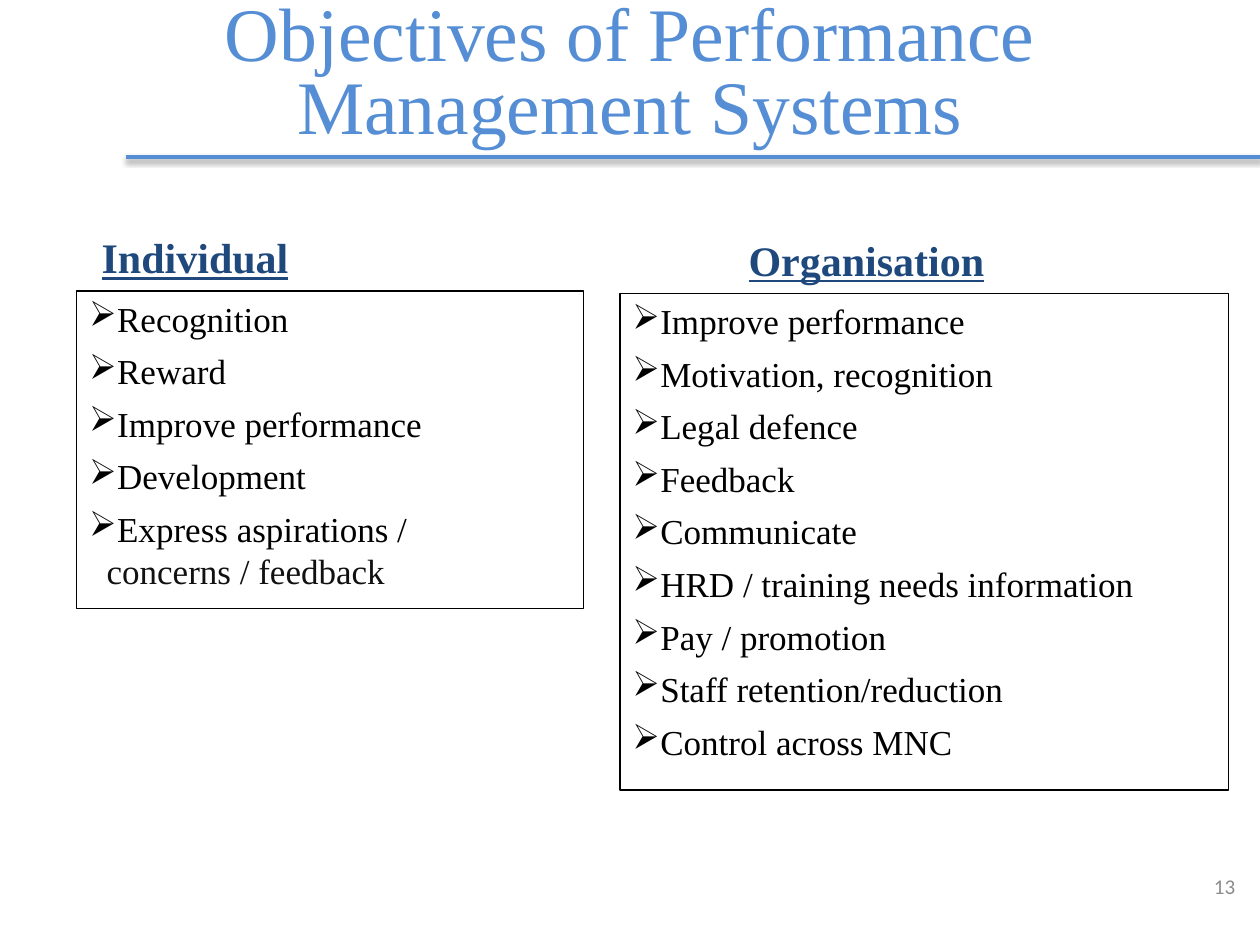
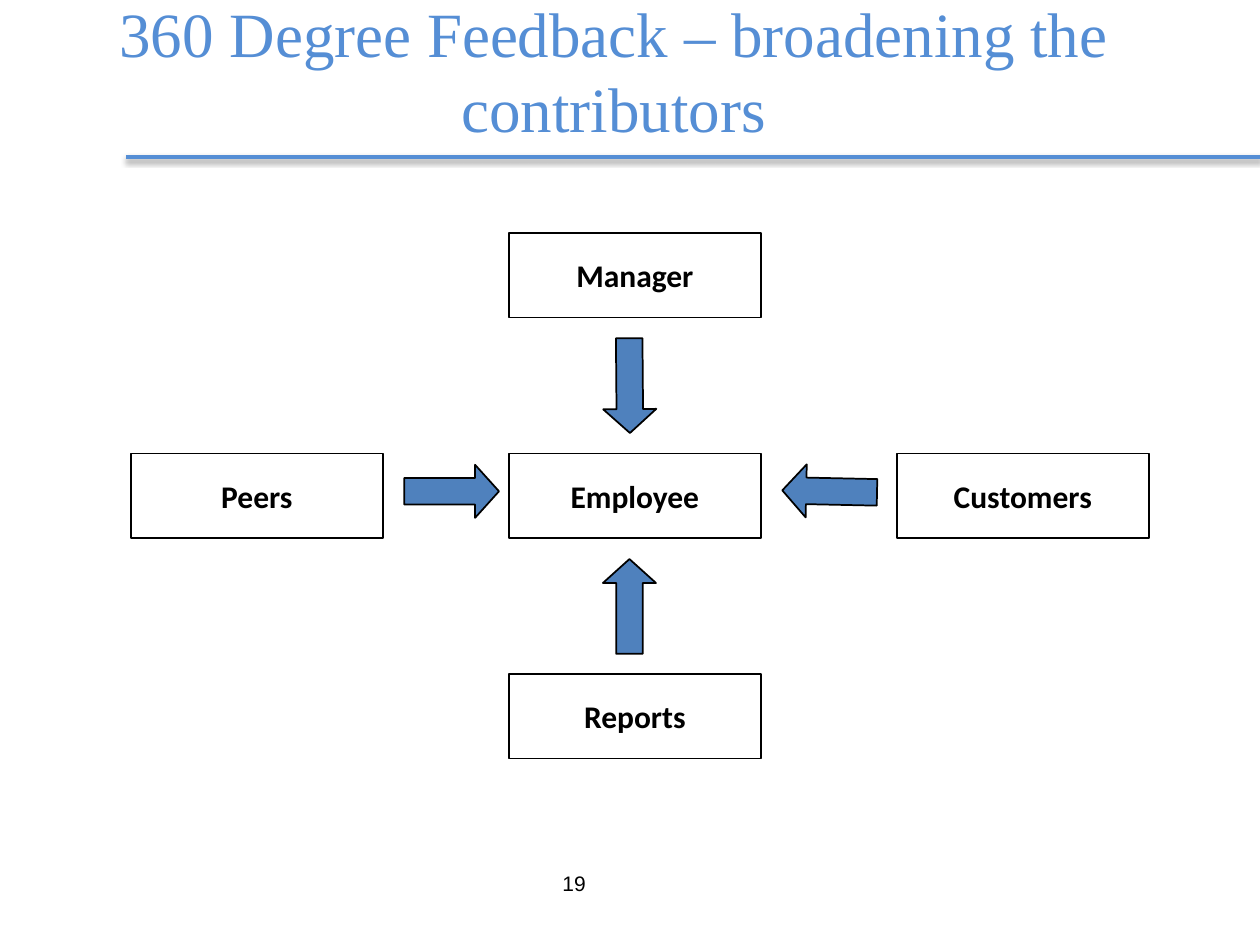
from dataclasses import dataclass

from lxml.etree import SubElement
from pptx import Presentation
from pptx.dml.color import RGBColor
from pptx.enum.shapes import MSO_CONNECTOR, MSO_SHAPE
from pptx.enum.text import MSO_ANCHOR, PP_ALIGN
from pptx.oxml import parse_xml
from pptx.oxml.ns import nsdecls, qn
from pptx.util import Cm, Pt


@dataclass(frozen=True)
class Theme:
    """Colours, fonts and type sizes shared by the slides."""
    sky: str = "558ED5"
    navy: str = "1F497D"
    steel: str = "4F81BD"
    grey: str = "8C8C8C"
    black: str = "000000"
    soft_black: str = "111111"
    serif: str = "Times New Roman"
    sans: str = "Calibri"
    plain: str = "Arial"
    heading_size: float = 24
    item_size: float = 20
    node_size: float = 18
    number_size: float = 12


THEME = Theme()

INDIVIDUAL = ["Recognition", "Reward", "Improve performance", "Development",
              "Express aspirations /\vconcerns / feedback"]
ORGANISATION = ["Improve performance", "Motivation, recognition", "Legal defence",
                "Feedback", "Communicate", "HRD / training needs information",
                "Pay / promotion", "Staff retention/reduction", "Control across MNC"]


def apply(target, formats):
    """Set every attribute of target named in a dict of format values."""
    for name, value in formats.items():
        setattr(target, name, value)


def add_span(para, text, family, size, color, **extra):
    """Add one formatted run to a paragraph."""
    span = para.add_run()
    span.text = text
    apply(span.font, {"name": family, "size": Pt(size), **extra})
    span.font.color.rgb = RGBColor.from_string(color)


def add_label(page, box, text, family, size, color, align=PP_ALIGN.LEFT,
              anchor=MSO_ANCHOR.MIDDLE, spacing=None, **extra):
    """Add a one-paragraph text box."""
    frame = page.shapes.add_textbox(*map(Cm, box)).text_frame
    apply(frame, {"word_wrap": True, "vertical_anchor": anchor})
    para = frame.paragraphs[0]
    apply(para, {"alignment": align, "line_spacing": spacing})
    add_span(para, text, family, size, color, **extra)


def add_figure(page, kind, box, fill=None, width=1):
    """Add a black-outlined preset shape without shadow."""
    figure = page.shapes.add_shape(kind, *map(Cm, box))
    figure.shadow.inherit = False
    if fill:
        figure.fill.solid()
        figure.fill.fore_color.rgb = RGBColor.from_string(fill)
    else:
        figure.fill.background()
    figure.line.color.rgb = RGBColor.from_string(THEME.black)
    figure.line.width = Pt(width)
    return figure


def add_title_band(page, box, title, size, spacing=None):
    """Add the title and the shadowed rule beneath it."""
    rule = page.shapes.add_connector(
        MSO_CONNECTOR.STRAIGHT, Cm(2.54), Cm(3.17), Cm(25.4), Cm(3.17))
    rule.line.color.rgb = RGBColor.from_string(THEME.sky)
    rule.line.width = Pt(2)
    rule._element.spPr.append(parse_xml(
        f'<a:effectLst {nsdecls("a")}>'
        f'<a:outerShdw blurRad="{Pt(3.1)}" dist="{Pt(1.6)}" dir="5400000" rotWithShape="0">'
        f'<a:srgbClr val="{THEME.black}"><a:alpha val="38000"/></a:srgbClr>'
        '</a:outerShdw></a:effectLst>'))
    add_label(page, box, title, THEME.serif, size, THEME.sky,
              align=PP_ALIGN.CENTER, spacing=spacing)


def add_page_number(page, box, number, family, color):
    """Add the right-aligned page number."""
    add_label(page, box, number, family, THEME.number_size, color, align=PP_ALIGN.RIGHT)


def add_objective_panel(page, box, heading, heading_shift, items):
    """Add an outlined bullet list with an underlined heading above it."""
    left, top, width, _ = box
    add_label(page, (left + heading_shift, top - 1.32, width - heading_shift, 1.3),
              heading, THEME.serif, THEME.heading_size, THEME.navy,
              anchor=MSO_ANCHOR.TOP, bold=True, underline=True)
    frame = add_figure(page, MSO_SHAPE.RECTANGLE, box, width=0.75).text_frame
    apply(frame, {"word_wrap": True, "vertical_anchor": MSO_ANCHOR.TOP})
    for index, item in enumerate(items):
        para = frame.add_paragraph() if index else frame.paragraphs[0]
        properties = para._p.get_or_add_pPr()
        properties.set("marL", str(Cm(0.35)))
        properties.set("indent", str(-Cm(0.35)))
        SubElement(properties, qn("a:buChar")).set("char", "➢")
        apply(para, {"alignment": PP_ALIGN.LEFT, "space_before": Pt(6 if index else 0)})
        first, *rest = item.split("\v")
        add_span(para, first, THEME.serif, THEME.item_size, THEME.black)
        for line in rest:
            para.add_line_break()
            add_span(para, line, THEME.serif, THEME.item_size, THEME.soft_black)


def add_feedback_diagram(page, box):
    """Add the employee box with four contributors pointing at it."""
    left, top, width, height = box
    node_width, node_height = 5.08, 1.7
    arrow_width, arrow_height = 1.91, 1.07
    middle, centre = 7.62, (height - node_height) / 2
    right, bottom = width - node_width, height - node_height
    nodes = [("Employee", middle, centre), ("Reports", middle, bottom),
             ("Manager", middle, 0), ("Peers", 0, centre), ("Customers", right, centre)]
    for name, x, y in nodes:
        node = add_figure(page, MSO_SHAPE.RECTANGLE,
                          (left + x, top + y, node_width, node_height))
        apply(node.text_frame, {"word_wrap": False, "vertical_anchor": MSO_ANCHOR.MIDDLE})
        para = node.text_frame.paragraphs[0]
        para.alignment = PP_ALIGN.CENTER
        add_span(para, name, THEME.sans, THEME.node_size, THEME.black, bold=True)
    across, down = 4.67, 10.05
    arrows = [(5.51, across, 0), (13.13, across, 181.2),
              (down - arrow_width / 2, 6.99, 270), (down - arrow_width / 2, 2.54, 89.5)]
    for x, y, turn in arrows:
        arrow = add_figure(page, MSO_SHAPE.RIGHT_ARROW,
                           (left + x, top + y, arrow_width, arrow_height), THEME.steel)
        arrow.rotation = turn
        arrow.adjustments[0], arrow.adjustments[1] = 0.5, 0.45


def build_objectives(page):
    """Build the slide that compares individual and organisation objectives."""
    add_title_band(page, (1.27, 0.13, 22.86, 2.82),
                   "Objectives of Performance Management Systems", 43.2, 0.8)
    add_page_number(page, (23.95, 17.35, 1.2, 1.02), "13", THEME.sans, THEME.grey)
    add_objective_panel(page, (1.55, 5.87, 10.21, 6.4), "Individual", 0.25, INDIVIDUAL)
    add_objective_panel(page, (12.5, 5.92, 12.27, 10.01), "Organisation", 2.34, ORGANISATION)


def build_feedback(page):
    """Build the 360 degree feedback slide."""
    add_title_band(page, (0.94, -0.18, 22.86, 3.18),
                   "360 Degree Feedback – broadening the contributors", 36)
    add_feedback_diagram(page, (2.64, 4.7, 20.52, 10.59))
    add_page_number(page, (10.59, 17.3, 1.47, 1.02), "19", THEME.plain, THEME.black)


def main():
    """Build the deck and save it."""
    deck = Presentation()
    apply(deck, {"slide_width": Cm(25.4), "slide_height": Cm(19.05)})
    for build in (build_objectives, build_feedback):
        build(deck.slides.add_slide(deck.slide_layouts[6]))
    deck.save("out.pptx")


if __name__ == "__main__":
    main()
